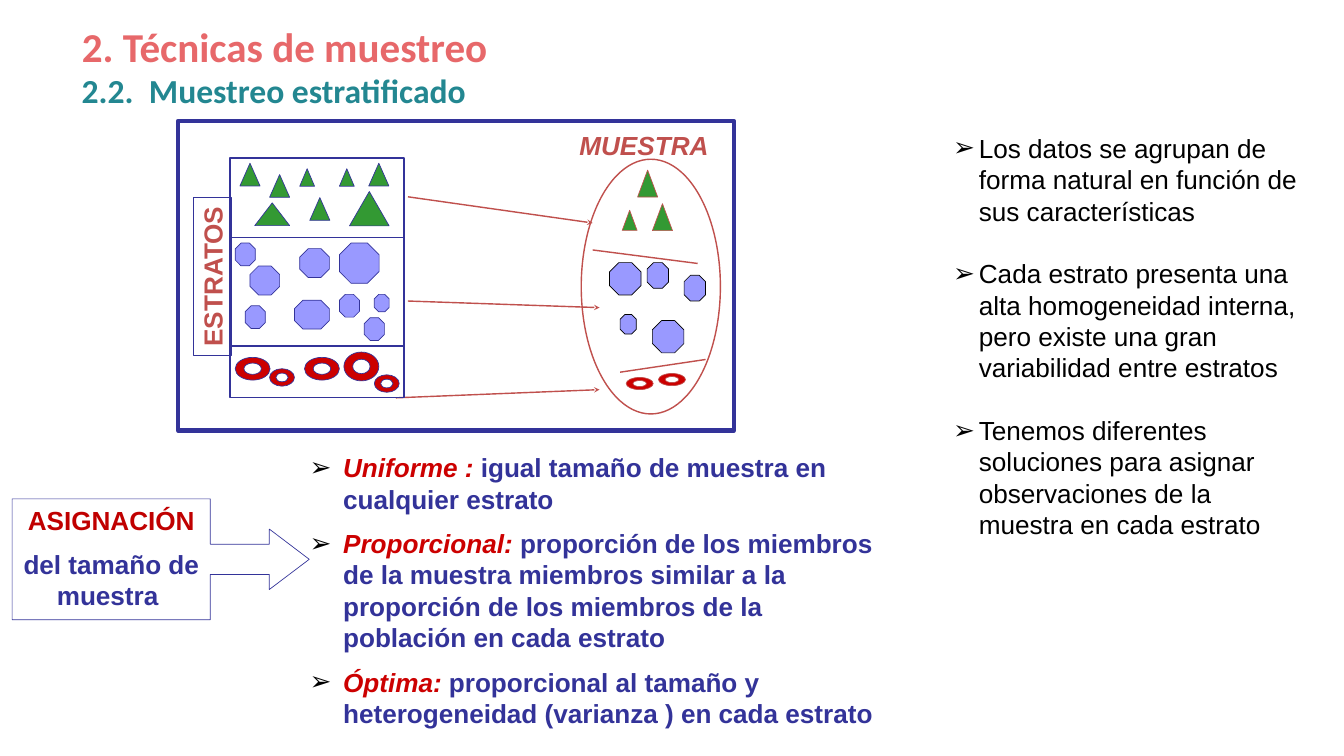
from lxml.etree import SubElement
from pptx import Presentation
from pptx.dml.color import RGBColor
from pptx.enum.shapes import MSO_CONNECTOR, MSO_SHAPE
from pptx.enum.text import MSO_ANCHOR, MSO_AUTO_SIZE, PP_ALIGN
from pptx.oxml.ns import qn
from pptx.util import Cm, Pt

CORAL = RGBColor(0xE7, 0x68, 0x6A)
TEAL = RGBColor(0x23, 0x87, 0x91)
NAVY = RGBColor(0x33, 0x33, 0x99)
BRICK = RGBColor(0xC0, 0x50, 0x4D)
RED = RGBColor(0xCC, 0x00, 0x00)
DARK_RED = RGBColor(0xC0, 0x00, 0x00)
GREEN = RGBColor(0x33, 0x99, 0x33)
LILAC = RGBColor(0x99, 0x99, 0xFF)
BLACK = RGBColor(0x00, 0x00, 0x00)

# Content: each paragraph is a list of (text, run format)
TITLE = [[("2. Técnicas de muestreo", {})]]
SUBTITLE = [[("2.2.\tMuestreo estratificado", {})]]
FEATURES = [[(text, {})] for text in (
    "Los datos se agrupan de forma natural en función de sus características",
    "Cada estrato presenta una alta homogeneidad interna, pero existe una gran "
    "variabilidad entre estratos",
    "Tenemos diferentes soluciones para asignar observaciones de la muestra en cada estrato",
)]
TERM = {"color": RED, "italic": True}
ALLOCATIONS = [[(term, TERM), (meaning, {})] for term, meaning in (
    ("Uniforme : ", "igual tamaño de muestra en cualquier estrato"),
    ("Proporcional: ", "proporción de los miembros de la muestra miembros similar a la "
                       "proporción de los miembros de la población en cada estrato"),
    ("Óptima: ", "proporcional al tamaño y heterogeneidad (varianza ) en cada estrato"),
)]
CALLOUT = [[("ASIGNACIÓN", {"color": DARK_RED})], [("del tamaño de muestra ", {})]]

# Diagram, in centimetres: (left, top, width, height)
FRAME = (6.73, 4.57, 21.01, 11.71)
POPULATION = (8.7, 5.96, 6.56, 9.07)
SAMPLE = (21.97, 6.02, 5.26, 9.63)
STRATUM_TOPS = (8.98, 13.09)
SAMPLE_DIVIDERS = [(22.4, 9.45, 26.37, 9.96), (23.44, 14.07, 26.67, 13.59)]
ARROWS = [(15.42, 7.44, 22.4, 8.43), (15.42, 11.38, 22.66, 11.63), (14.96, 15.04, 22.66, 14.73)]

SMALL, MEDIUM, WIDE = (0.56, 0.66), (0.76, 0.86), (1.32, 0.86)
# Members as {size: [(left, top), ...]}
POPULATION_TRIANGLES = {
    SMALL: [(11.33, 6.38), (12.83, 6.38)],
    MEDIUM: [(9.07, 6.17), (10.19, 6.6), (13.94, 6.17), (11.71, 7.47)],
    WIDE: [(9.63, 7.67)],
    (1.5, 1.3): [(13.21, 7.24)],
}
POPULATION_OCTAGONS = {
    SMALL: [(14.15, 11.13)],
    MEDIUM: [(13.77, 12.01), (12.83, 11.13), (8.89, 9.19), (9.27, 11.56)],
    (1.12, 1.09): [(9.45, 10.06), (11.33, 9.4)],
    (1.32, 1.09): [(11.13, 11.35)],
    (1.5, 1.52): [(12.83, 9.19)],
}
POPULATION_RINGS = {
    WIDE: [(8.89, 13.51), (11.51, 13.51)],
    (0.94, 0.66): [(10.19, 13.94), (14.15, 14.17)],
    (1.32, 1.09): [(13, 13.31)],
}
SAMPLE_TRIANGLES = {(0.76, 1.02): [(24.66, 7.7), (24.1, 6.43)], (0.56, 0.76): [(23.52, 7.95)]}
SAMPLE_OCTAGONS = {
    (1.19, 1.22): [(23.04, 9.93), (24.66, 12.12)],
    (0.81, 0.97): [(24.46, 9.93), (25.86, 10.41)],
    (0.61, 0.74): [(23.44, 11.89)],
}
SAMPLE_RINGS = {(1.02, 0.46): [(23.67, 14.27), (24.89, 14.12)]}

# Quarter curves of a unit circle, from its left point round and back
BEND = 0.55
CIRCLE = [(-1, 0),
          (-1, -BEND), (-BEND, -1), (0, -1),
          (BEND, -1), (1, -BEND), (1, 0),
          (1, BEND), (BEND, 1), (0, 1),
          (-BEND, 1), (-1, BEND), (-1, 0)]

presentation = Presentation()
presentation.slide_width, presentation.slide_height = Cm(50.8), Cm(28.58)
slide = presentation.slides.add_slide(presentation.slide_layouts[3])
shapes = slide.shapes


def place(shape, box):
    shape.left, shape.top, shape.width, shape.height = map(Cm, box)
    return shape


def add_bullet(paragraph, indent):
    properties = paragraph._p.get_or_add_pPr()
    properties.set("marL", str(Cm(indent)))
    properties.set("indent", str(-Cm(indent)))
    color = SubElement(properties, qn("a:buClr"))
    SubElement(color, qn("a:srgbClr"), val=str(BLACK))
    SubElement(properties, qn("a:buFont"), typeface="Arial")
    SubElement(properties, qn("a:buChar"), char="➢")


def write(shape, paragraphs, size=28, font="Arial", color=NAVY, bold=True, italic=False,
          align=PP_ALIGN.LEFT, gap=14, bullet=None, tab=None, insets=(0.25, 0.13)):
    frame = shape.text_frame
    frame.word_wrap = True
    frame.auto_size = MSO_AUTO_SIZE.NONE
    frame.vertical_anchor = MSO_ANCHOR.TOP
    frame.margin_left = frame.margin_right = Cm(insets[0])
    frame.margin_top = frame.margin_bottom = Cm(insets[1])
    for index, runs in enumerate(paragraphs):
        paragraph = frame.add_paragraph() if index else frame.paragraphs[0]
        paragraph.alignment = align
        paragraph.space_before = Pt(gap if index else 0)
        if bullet:
            add_bullet(paragraph, bullet)
        if tab:
            tabs = SubElement(paragraph._p.get_or_add_pPr(), qn("a:tabLst"))
            SubElement(tabs, qn("a:tab"), pos=str(Cm(tab)), algn="l")
        for text, changes in runs:
            run = paragraph.add_run()
            run.text = text
            run.font.size, run.font.name, run.font.bold = Pt(size), font, bold
            run.font.italic = changes.get("italic", italic)
            run.font.color.rgb = changes.get("color", color)


def style(shape, fill, line, width):
    shape.shadow.inherit = False
    if fill is None:
        shape.fill.background()
    else:
        shape.fill.solid()
        shape.fill.fore_color.rgb = fill
    shape.line.color.rgb = line
    shape.line.width = Pt(width)
    return shape


def add_outline(kind, box, line=NAVY, width=0.75, fill=None):
    return style(shapes.add_shape(kind, *map(Cm, box)), fill, line, width)


def add_line(ends, color=BRICK, width=1.5, arrow=False):
    line = shapes.add_connector(MSO_CONNECTOR.STRAIGHT, *map(Cm, ends))
    line.line.color.rgb = color
    line.line.width = Pt(width)
    if arrow:
        SubElement(line.line._get_or_add_ln(), qn("a:tailEnd"), type="stealth")
    SubElement(line._element.spPr, qn("a:effectLst"))


def add_ring(box, line):
    """Curved ring whose hole is half its width and height."""
    left, top, width, height = map(Cm, box)
    builder = shapes.build_freeform(left, top)
    builder.add_line_segments([(left + width, top), (left + width, top + height)])
    ring = builder.convert_to_shape()
    outline = next(ring._element.iter(qn("a:path")))
    for segment in list(outline):
        outline.remove(segment)
    # The hole runs the other way round
    for scale, points in ((1, CIRCLE), (0.5, CIRCLE[::-1])):
        for index, (x, y) in enumerate(points):
            if index == 0:
                segment = SubElement(outline, qn("a:moveTo"))
            elif index % 3 == 1:
                segment = SubElement(outline, qn("a:cubicBezTo"))
            SubElement(segment, qn("a:pt"), x=str(round(width * (1 + scale * x) / 2)),
                       y=str(round(height * (1 + scale * y) / 2)))
        SubElement(outline, qn("a:close"))
    style(ring, RED, line, 0.75)


def add_members(triangles, octagons, rings, line, octagon_line):
    for kind, groups, fill, color in ((MSO_SHAPE.ISOSCELES_TRIANGLE, triangles, GREEN, line),
                                      (MSO_SHAPE.OCTAGON, octagons, LILAC, octagon_line)):
        for size, corners in groups.items():
            for corner in corners:
                add_outline(kind, corner + size, color, fill=fill)
    for size, corners in rings.items():
        for corner in corners:
            add_ring(corner + size, line)


# Headings and lists
title, allocations, features = slide.placeholders
write(place(title, (2.84, 0.69, 17.2, 2.13)), TITLE, size=44, font="Calibri", color=CORAL)
subtitle = shapes.add_textbox(*map(Cm, (2.84, 2.52, 25.9, 2.4)))
write(subtitle, SUBTITLE, size=36, font="Calibri", color=TEAL, tab=2.54)
write(place(allocations, (11.32, 16.89, 22.38, 11.15)), ALLOCATIONS, bullet=1.27,
      insets=(0.38, 0.18))
write(place(features, (35.78, 4.87, 13.77, 15.82)), FEATURES, color=BLACK, bold=False,
      gap=33.5, bullet=0.97)

# Allocation callout
callout = add_outline(MSO_SHAPE.RIGHT_ARROW_CALLOUT, (0.46, 18.86, 11.23, 4.57))
for index, value in enumerate((0.25, 0.25, 0.33, 0.667)):
    callout.adjustments[index] = value
write(callout, CALLOUT, align=PP_ALIGN.CENTER, insets=(0.38, 0.19))

# Sample
for ends in SAMPLE_DIVIDERS:
    add_line(ends)
add_members(SAMPLE_TRIANGLES, SAMPLE_OCTAGONS, SAMPLE_RINGS, BRICK, BLACK)
for ends in ARROWS:
    add_line(ends, arrow=True)
add_outline(MSO_SHAPE.OVAL, SAMPLE, BRICK, 1.5)
sample_label = shapes.add_textbox(*map(Cm, (20.96, 4.7, 6.76, 3.38)))
write(sample_label, [[("MUESTRA", {})]], color=BRICK, italic=True, align=PP_ALIGN.CENTER,
      insets=(0.38, 0.18))

# Population split into strata
add_outline(MSO_SHAPE.RECTANGLE, POPULATION, width=2)
for top in STRATUM_TOPS:
    add_line((POPULATION[0], top, POPULATION[0] + POPULATION[2], top), NAVY, 2)
add_members(POPULATION_TRIANGLES, POPULATION_OCTAGONS, POPULATION_RINGS, NAVY, NAVY)
strata_label = add_outline(MSO_SHAPE.RECTANGLE, (5.04, 9.73, 5.97, 1.45))
strata_label.rotation = 270
write(strata_label, [[("ESTRATOS", {})]], color=BRICK, align=PP_ALIGN.CENTER)
add_outline(MSO_SHAPE.RECTANGLE, FRAME, width=4.5)

presentation.save("out.pptx")
